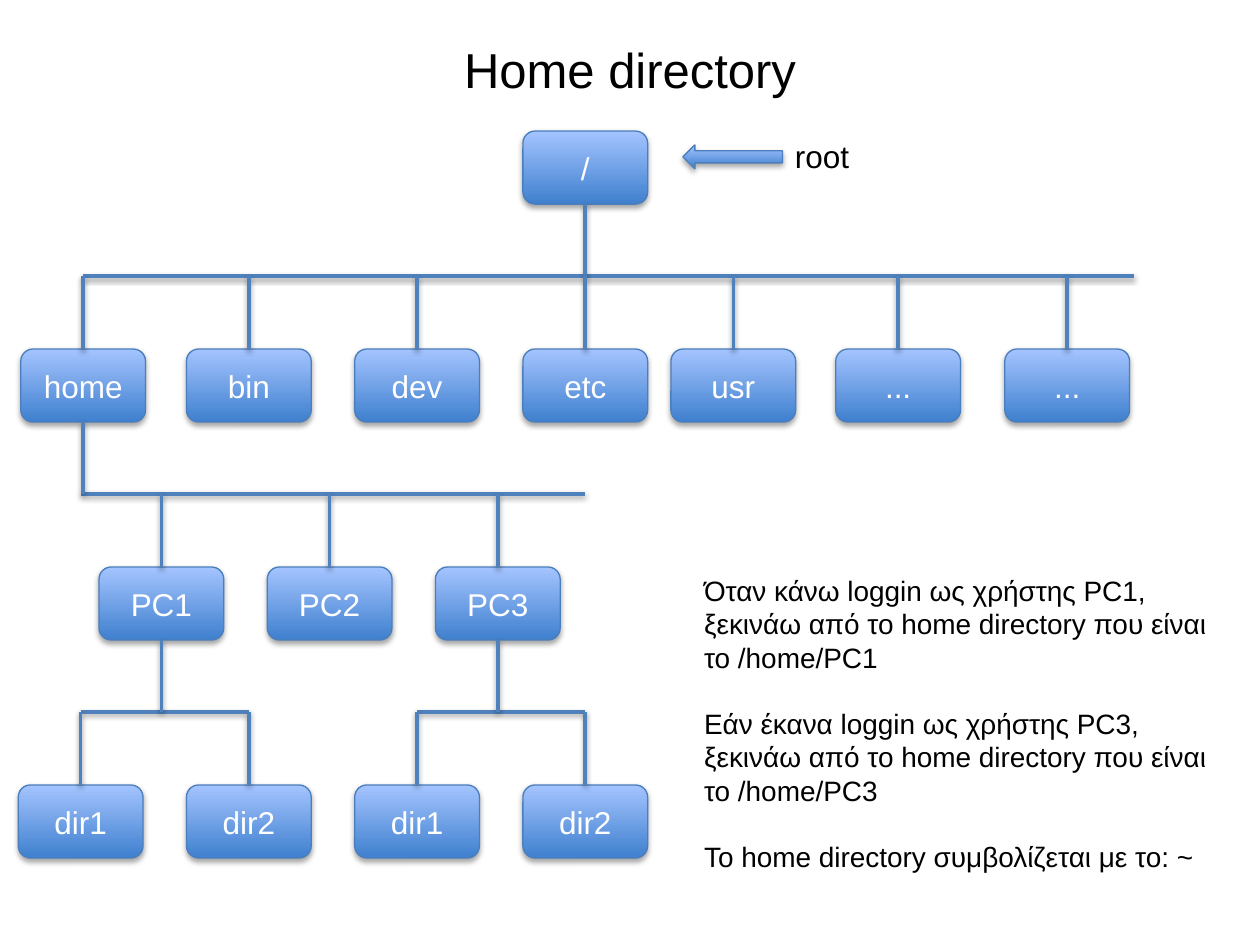
from dataclasses import dataclass

from lxml.etree import SubElement
from pptx import Presentation
from pptx.dml.color import RGBColor
from pptx.enum.shapes import MSO_CONNECTOR as Connector, MSO_SHAPE as Preset
from pptx.enum.text import MSO_ANCHOR as Anchor, MSO_AUTO_SIZE as AutoSize, PP_ALIGN as Align
from pptx.oxml.ns import qn
from pptx.shapes.autoshape import Shape
from pptx.shapes.connector import Connector as Line
from pptx.slide import Slide
from pptx.text.text import TextFrame
from pptx.util import Emu, Inches, Pt

COLORS = {
    "dark": "3F80CE",
    "light": "A4C4FF",
    "outline": "4B7EBC",
    "branch": "4F81BD",
    "shadow": "000000",
    "text": "000000",
    "label": "FFFFFF",
}
FONT = "Arial"

# Grid of the tree: columns give box centres, rows give box tops
FIRST_COLUMN, COLUMN_STEP = 0.64, 1.335
FIRST_ROW, ROW_STEP = 1.04, 1.73
BOX_WIDTH, BOX_HEIGHT = 0.99, 0.58


@dataclass(frozen=True)
class Directory:
    name: str
    column: float


@dataclass(frozen=True)
class Level:
    """Children of one directory, hung from a bar between two columns."""
    parent: tuple[int, int]  # row and index in that row
    bar: tuple[float, float]
    children: tuple[int, ...]


ROWS = [
    [Directory("/", 3)],
    [
        Directory("home", 0.015), Directory("bin", 1), Directory("dev", 2),
        Directory("etc", 3), Directory("usr", 3.88),
        Directory("...", 4.86), Directory("...", 5.865),
    ],
    [Directory("PC1", 0.48), Directory("PC2", 1.48), Directory("PC3", 2.48)],
    [Directory("dir1", 0), Directory("dir2", 1),
     Directory("dir1", 2), Directory("dir2", 3)],
]
LEVELS = [
    Level((0, 0), (0.015, 6.26), tuple(range(7))),
    Level((1, 0), (0, 3), (0, 1, 2)),
    Level((2, 0), (0, 1), (0, 1)),
    Level((2, 2), (2, 3), (2, 3)),
]
EXPLANATION = [
    "Όταν κάνω loggin ως χρήστης PC1, ξεκινάω από το home directory που είναι το /home/PC1",
    "Εάν έκανα loggin ως χρήστης PC3, ξεκινάω από το home directory που είναι το /home/PC3",
    "Το home directory συμβολίζεται με το: ~",
]


def rgb(name: str) -> RGBColor:
    return RGBColor.from_string(COLORS[name])


def column_x(column: float) -> Emu:
    return Inches(FIRST_COLUMN + column * COLUMN_STEP)


def row_y(row: int) -> Emu:
    return Inches(FIRST_ROW + row * ROW_STEP)


def add_shadow(item: Shape | Line, distance: float, opacity: int) -> None:
    effects = SubElement(item._element.spPr, qn("a:effectLst"))
    shadow = SubElement(
        effects, qn("a:outerShdw"), blurRad=str(Pt(3.15)), dist=str(Pt(distance)),
        dir="5400000", rotWithShape="0")
    color = SubElement(shadow, qn("a:srgbClr"), val=COLORS["shadow"])
    SubElement(color, qn("a:alpha"), val=str(opacity * 1000))


def write(frame: TextFrame, lines: list[str], size: int, color: str = "text",
          align: Align = Align.LEFT, gap: float = 0) -> None:
    for index, line in enumerate(lines):
        paragraph = frame.add_paragraph() if index else frame.paragraphs[0]
        paragraph.text = line
        paragraph.alignment = align
        paragraph.space_before = Pt(gap if index else 0)
        paragraph.font.name = FONT
        paragraph.font.size = Pt(size)
        paragraph.font.color.rgb = rgb(color)


def add_glossy(slide: Slide, preset: Preset, left: Emu, top: Emu,
               width: Emu, height: Emu) -> Shape:
    """Add a shape with the blue gradient, outline and shadow of the tree."""
    shape = slide.shapes.add_shape(preset, left, top, width, height)
    shape.fill.gradient()
    shape.fill.gradient_angle = 90
    for stop, color in zip(shape.fill.gradient_stops, ("dark", "light")):
        stop.color.rgb = rgb(color)
    shape.line.color.rgb = rgb("outline")
    shape.line.width = Pt(0.75)
    add_shadow(shape, 1.8, 35)
    return shape


def add_directory(slide: Slide, directory: Directory, row: int) -> Shape:
    box = add_glossy(
        slide, Preset.ROUNDED_RECTANGLE,
        column_x(directory.column) - Inches(BOX_WIDTH / 2), row_y(row),
        Inches(BOX_WIDTH), Inches(BOX_HEIGHT))
    box.text_frame.vertical_anchor = Anchor.MIDDLE
    write(box.text_frame, [directory.name], 18, "label", Align.CENTER)
    return box


def add_branch(slide: Slide, x1: Emu, y1: Emu, x2: Emu, y2: Emu) -> Line:
    line = slide.shapes.add_connector(Connector.STRAIGHT, x1, y1, x2, y2)
    line.line.color.rgb = rgb("branch")
    line.line.width = Pt(2)
    add_shadow(line, 1.6, 38)
    return line


def add_level(slide: Slide, level: Level, boxes: list[list[Shape]]) -> None:
    parent_row, parent_index = level.parent
    row = parent_row + 1
    bar_y = row_y(row) - Inches(BOX_HEIGHT)
    left, right = map(column_x, level.bar)
    add_branch(slide, left, bar_y, right, bar_y)

    parent_x = column_x(ROWS[parent_row][parent_index].column)
    stem = add_branch(slide, parent_x, row_y(parent_row) + Inches(BOX_HEIGHT), parent_x, bar_y)
    stem.begin_connect(boxes[parent_row][parent_index], 2)
    for child in level.children:
        x = column_x(ROWS[row][child].column)
        add_branch(slide, x, bar_y, x, row_y(row)).end_connect(boxes[row][child], 0)


def add_text(slide: Slide, left: Emu, top: Emu, width: Emu, height: Emu,
             wrap: bool = True) -> TextFrame:
    frame = slide.shapes.add_textbox(left, top, width, height).text_frame
    frame.word_wrap = wrap
    return frame


def main() -> None:
    deck = Presentation()
    deck.slide_width, deck.slide_height = Inches(10), Inches(7.5)
    slide = deck.slides.add_slide(deck.slide_layouts[6])

    title = add_text(slide, Inches(0.5), Inches(0.3), Inches(9), Inches(0.5))
    title.vertical_anchor = Anchor.MIDDLE
    write(title, ["Home directory"], 28, align=Align.CENTER)

    boxes = [[add_directory(slide, directory, row) for directory in directories]
             for row, directories in enumerate(ROWS)]
    for level in LEVELS:
        add_level(slide, level, boxes)

    explanation = add_text(slide, Inches(5.49), row_y(2), Inches(4.27), Inches(2.79))
    explanation.auto_size = AutoSize.SHAPE_TO_FIT_TEXT
    write(explanation, EXPLANATION, 16, gap=18.4)

    root = add_text(slide, Inches(6.21), row_y(0), Inches(0.64), Inches(0.4), wrap=False)
    root.auto_size = AutoSize.SHAPE_TO_FIT_TEXT
    write(root, ["root"], 18)
    add_glossy(slide, Preset.LEFT_ARROW, Inches(5.42), Inches(1.15), Inches(0.79), Inches(0.19))

    deck.save("out.pptx")


if __name__ == "__main__":
    main()
